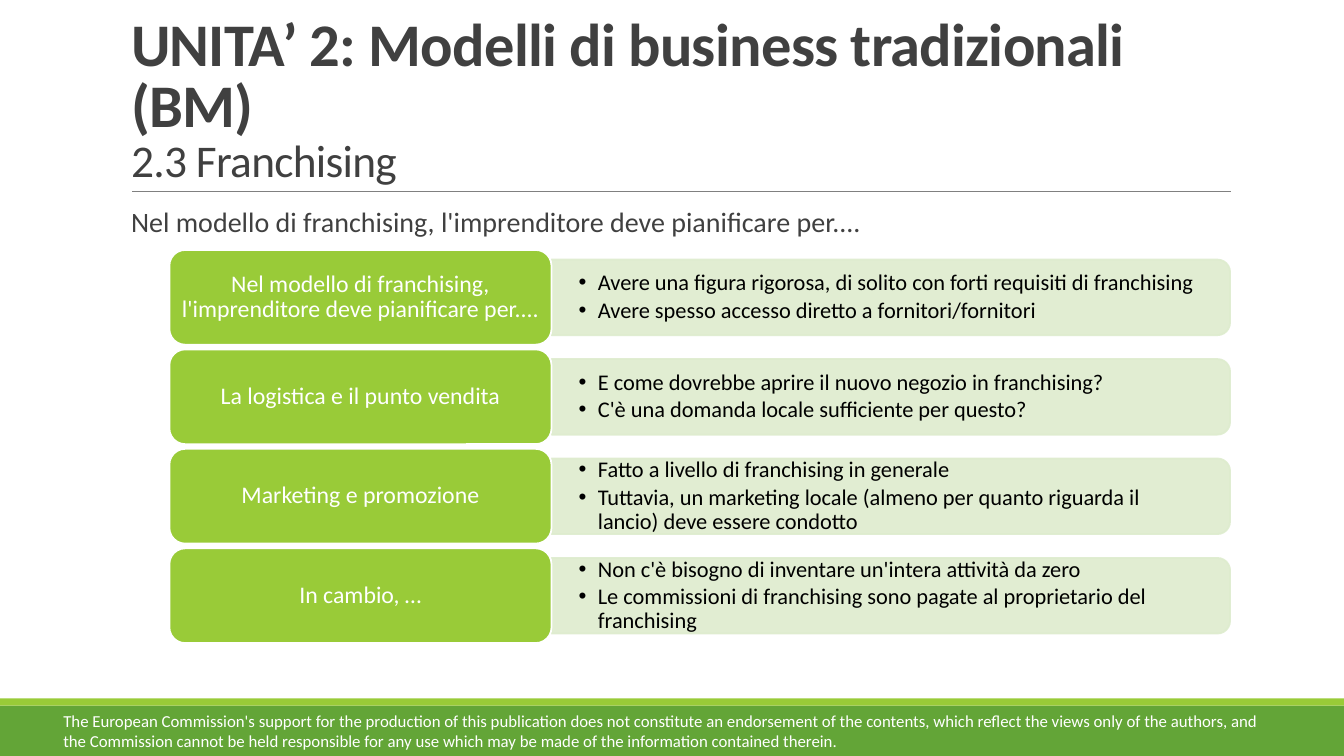
from dataclasses import dataclass
from lxml.etree import SubElement
from pptx import Presentation
from pptx.dml.color import RGBColor
from pptx.enum.shapes import MSO_CONNECTOR as LINE, MSO_SHAPE as SHAPE
from pptx.enum.text import MSO_ANCHOR as ANCHOR, PP_ALIGN as ALIGN
from pptx.oxml.ns import qn
from pptx.util import Inches, Pt

TITLE = "UNITA’ 2: Modelli di business tradizionali (BM)"
TOPIC = "2.3 Franchising"
LEAD = "Nel modello di franchising, l'imprenditore deve pianificare per...."
ROWS = [
    (LEAD, ["Avere una figura rigorosa, di solito con forti requisiti di franchising",
            "Avere spesso accesso diretto a fornitori/fornitori"]),
    ("La logistica e il punto vendita",
     ["E come dovrebbe aprire il nuovo negozio in franchising?",
      "C'è una domanda locale sufficiente per questo?"]),
    ("Marketing e promozione",
     ["Fatto a livello di franchising in generale",
      "Tuttavia, un marketing locale (almeno per quanto riguarda il lancio) "
      "deve essere condotto"]),
    ("In cambio, …",
     ["Non c'è bisogno di inventare un'intera attività da zero",
      "Le commissioni di franchising sono pagate al proprietario del franchising"]),
]
NOTICE = ("The European Commission's support for the production of this publication "
          "does not constitute an endorsement of the contents, which reflect the views "
          "only of the authors, and the Commission cannot be held responsible for any "
          "use which may be made of the information contained therein.")


@dataclass(frozen=True)
class Theme:
    font: str = "Calibri"
    dark: str = "404040"
    black: str = "000000"
    white: str = "FFFFFF"
    rule: str = "808080"
    lime: str = "99CB38"
    green: str = "63A537"
    pale: str = "DEECCE"
    title: float = 43.2
    topic: float = 32.4
    lead: float = 20
    label: float = 17
    point: float = 16
    notice: float = 12


T = Theme()
WIDE, HIGH = 13.33, 7.5
LEFT, SPAN = 1.2, 11            # title and body column
BAR, STRIPE = 0.5, 0.07         # footer bands
TOP, BOTTOM = 2.48, 6.38        # grid of rows
LABEL_X, LABEL_W, LABEL_H = 1.68, 3.79, 0.94
PANEL_X, PANEL_W, PANEL_H = LABEL_X + LABEL_W, 6.73, 0.75
STEP = (BOTTOM - TOP - LABEL_H) / (len(ROWS) - 1)


def rgb(code):
    return RGBColor.from_string(code)


def box(x, y, w, h):
    return [Inches(n) for n in (x, y, w, h)]


def style(run, size, color, bold=False):
    font = run.font
    font.name, font.size, font.bold = T.font, Pt(size), bold
    font.color.rgb = rgb(color)


def inset(frame, side, edge):
    frame.word_wrap = True
    frame.margin_left = frame.margin_right = Inches(side)
    frame.margin_top = frame.margin_bottom = Inches(edge)


def indent(par, left, first, mark=None):
    props = par._p.get_or_add_pPr()
    props.set("marL", str(Inches(left)))
    props.set("indent", str(Inches(first)))
    if mark:
        SubElement(props, qn("a:buFont"), typeface="Arial")
        SubElement(props, qn("a:buChar"), char=mark)
    else:
        SubElement(props, qn("a:buNone"))


def add(kind, place, fill, line=None):
    shape = slide.shapes.add_shape(kind, *box(*place))
    shape.shadow.inherit = False
    shape.fill.solid()
    shape.fill.fore_color.rgb = rgb(fill)
    if line:
        shape.line.color.rgb = rgb(line)
        shape.line.width = Pt(1.25)
    else:
        shape.line.fill.background()
    return shape


def panel(mid, points):
    """Pale bar, rounded on its right side only, with its bullet list."""
    x = PANEL_X + (PANEL_W - PANEL_H) / 2
    bar = add(SHAPE.ROUND_2_SAME_RECTANGLE,
              (x, mid - PANEL_W / 2, PANEL_H, PANEL_W), T.pale, T.pale)
    bar.rotation = 90
    for color in bar._element.spPr.iter(qn("a:srgbClr")):
        SubElement(color, qn("a:alpha"), val="90000")
    high = 0.68
    frame = slide.shapes.add_textbox(
        *box(PANEL_X, mid - high / 2, 6.7, high)).text_frame
    inset(frame, 0.27, 0.14)
    frame.vertical_anchor = ANCHOR.MIDDLE
    frame.text = "\n".join(points)
    for par in frame.paragraphs:
        par.line_spacing, par.space_after = 0.9, Pt(0.15 * T.point)
        indent(par, 0.19, -0.19, "•")
        style(par.runs[0], T.point, T.black)


def label(y, text):
    shape = add(SHAPE.ROUNDED_RECTANGLE, (LABEL_X, y, LABEL_W, LABEL_H), T.lime, T.white)
    frame = shape.text_frame
    inset(frame, 0.07, 0.04)
    frame.vertical_anchor = ANCHOR.MIDDLE
    frame.text = text
    par = frame.paragraphs[0]
    par.alignment, par.line_spacing = ALIGN.CENTER, 0.9
    style(par.runs[0], T.label, T.white)


deck = Presentation()
deck.slide_width, deck.slide_height = Inches(WIDE), Inches(HIGH)
slide = deck.slides.add_slide(deck.slide_layouts[1])
head, body = slide.placeholders

# Footer bands and the rule below the title
add(SHAPE.RECTANGLE, (0, HIGH - BAR, WIDE, BAR), T.green)
add(SHAPE.RECTANGLE, (0, HIGH - BAR - STRIPE, WIDE, STRIPE), T.lime)
rule = slide.shapes.add_connector(LINE.STRAIGHT, *box(1.31, 1.9, 12.21, 1.9))
rule.line.color.rgb, rule.line.width = rgb(T.rule), Pt(0.5)
SubElement(rule._element.spPr, qn("a:effectLst"))

# Title and lead sentence
head.left, head.top, head.width, head.height = box(LEFT, 0.31, SPAN, 1.59)
frame = head.text_frame
inset(frame, 0.1, 0.05)
frame.vertical_anchor = ANCHOR.BOTTOM
frame.text = TITLE + "\v" + TOPIC
par = frame.paragraphs[0]
par.alignment, par.line_spacing = ALIGN.LEFT, 0.85
for run, size, bold in zip(par.runs, (T.title, T.topic), (True, False)):
    style(run, size, T.dark, bold)
    run._r.get_or_add_rPr().set("spc", "-50")

body.left, body.top, body.width, body.height = box(LEFT, 2.02, SPAN, 4.4)
inset(body.text_frame, 0, 0.05)
body.text_frame.text = LEAD
par = body.text_frame.paragraphs[0]
par.line_spacing, par.space_before, par.space_after = 0.9, Pt(0), Pt(2)
indent(par, 0.1, 0)
style(par.runs[0], T.lead, T.dark)

# Footer notice
frame = slide.shapes.add_textbox(*box(0.53, HIGH - BAR, 12.3, BAR)).text_frame
inset(frame, 0.1, 0.05)
frame.text = NOTICE
style(frame.paragraphs[0].runs[0], T.notice, T.white)

for i, (name, points) in enumerate(ROWS):
    y = TOP + i * STEP
    panel(y + LABEL_H / 2, points)
    label(y, name)

deck.save("out.pptx")
